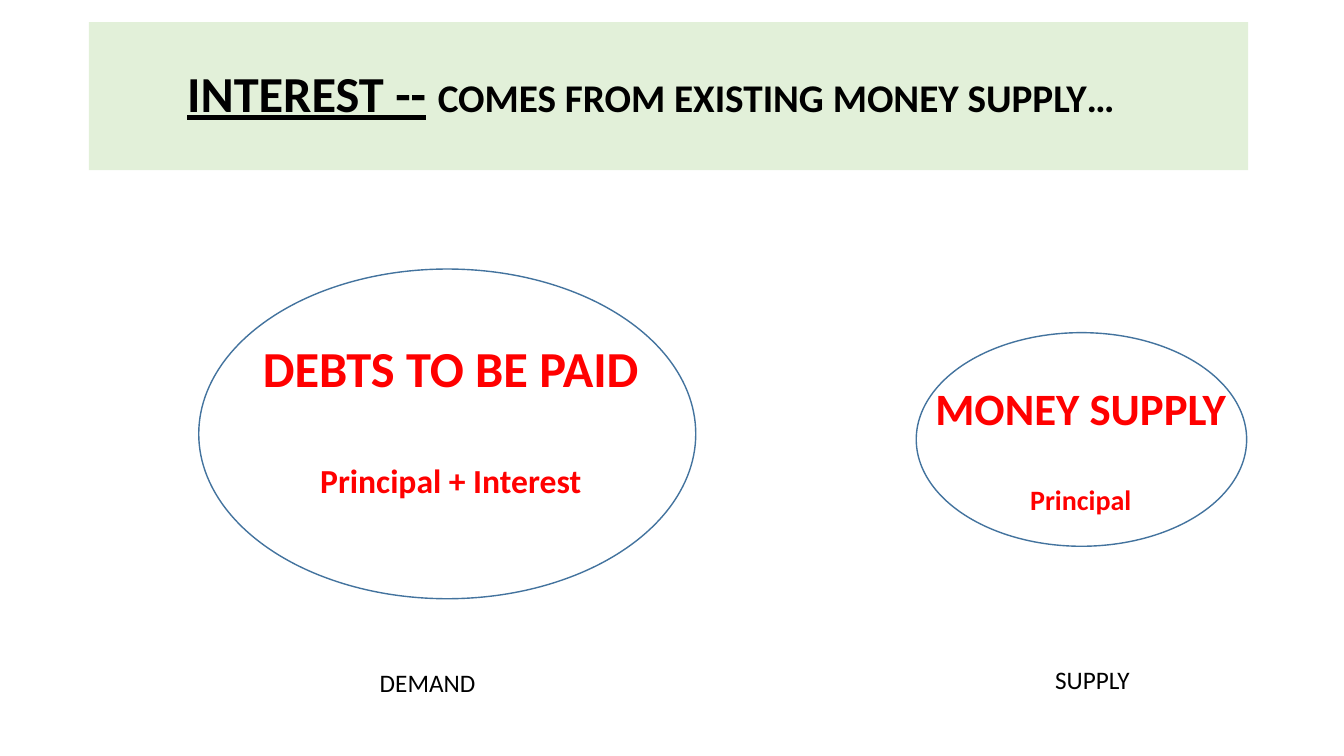
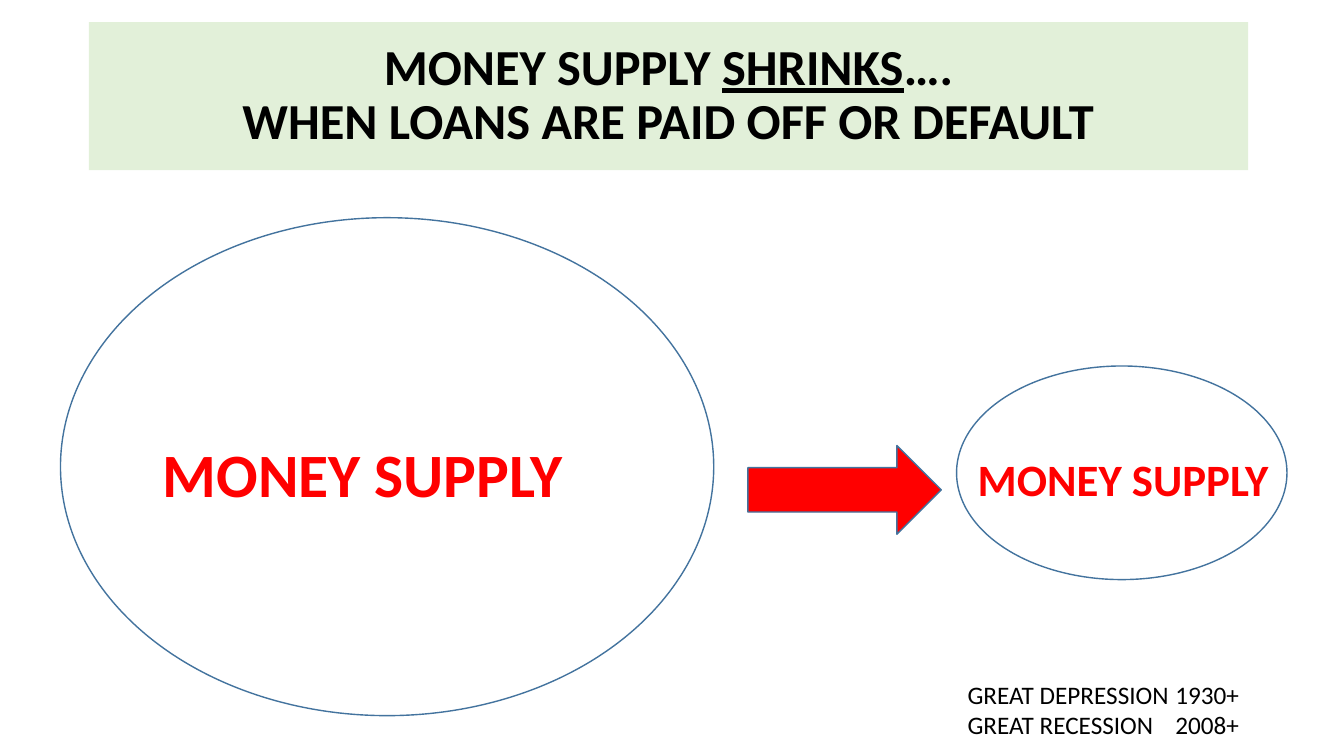
import dataclasses
import lxml.etree
import pptx
import pptx.dml.color
import pptx.enum.shapes
import pptx.enum.text
import pptx.oxml.ns
import pptx.util

Pt = pptx.util.Pt
MSO_SHAPE = pptx.enum.shapes.MSO_SHAPE
PP_ALIGN = pptx.enum.text.PP_ALIGN


@dataclasses.dataclass(frozen=True)
class Theme:
    font: str = "Calibri"
    ink: str = "000000"
    accent: str = "FF0000"
    band: str = "E2F0D9"
    outline: str = "43739E"
    hero: int = 44
    title: int = 36
    label: int = 32
    subtitle: int = 28
    detail: int = 24
    minor: int = 20
    note: int = 18


T = Theme()
BAND_BOX = (63.5, 15.8, 828, 105.8)


def rgb(value):
    return pptx.dml.color.RGBColor.from_string(value)


def add_run(p, text, size, color=T.ink, bold=False, underline=False):
    r = p.add_run()
    r.text = text
    r.font.name = T.font
    r.font.size = Pt(size)
    r.font.bold = bold
    r.font.underline = underline
    r.font.color.rgb = rgb(color)


def paragraph(tf, index):
    return tf.paragraphs[0] if index == 0 else tf.add_paragraph()


def add_text_box(s, box):
    tf = s.shapes.add_textbox(*map(Pt, box)).text_frame
    tf.word_wrap = True
    return tf


def add_outlined(s, kind, box, fill=None):
    sp = s.shapes.add_shape(kind, *map(Pt, box))
    sp.shadow.inherit = False
    if fill:
        sp.fill.solid()
        sp.fill.fore_color.rgb = rgb(fill)
    else:
        sp.fill.background()
    sp.line.color.rgb = rgb(T.outline)
    sp.line.width = Pt(1)


def title_band(s, box, lines, right_inset=7.2):
    sp = s.shapes.title
    sp.left, sp.top, sp.width, sp.height = map(Pt, box)
    sp.fill.solid()
    sp.fill.fore_color.rgb = rgb(T.band)
    tf = sp.text_frame
    tf.auto_size = pptx.enum.text.MSO_AUTO_SIZE.NONE
    tf.vertical_anchor = pptx.enum.text.MSO_ANCHOR.MIDDLE
    tf.margin_right = Pt(right_inset)
    for i, runs in enumerate(lines):
        p = paragraph(tf, i)
        p.alignment = PP_ALIGN.CENTER
        p.line_spacing = 0.9
        for text, size, underline in runs:
            add_run(p, text, size, bold=True, underline=underline)


def bubble(s, box, text_box, captions, gap=0):
    left, top, _, _ = box
    dx, dy, width, height = text_box
    add_outlined(s, MSO_SHAPE.OVAL, box)
    tf = add_text_box(s, (left + dx, top + dy, width, height))
    for i, (text, size) in enumerate(captions):
        p = paragraph(tf, i)
        p.alignment = PP_ALIGN.CENTER
        if i:
            p.space_before = Pt(gap)
        add_run(p, text, size, T.accent, bold=True)


def note(s, box, lines, tab=None):
    tf = add_text_box(s, box)
    for i, text in enumerate(lines):
        p = paragraph(tf, i)
        if tab:
            qn = pptx.oxml.ns.qn
            stops = lxml.etree.SubElement(p._p.get_or_add_pPr(), qn("a:tabLst"))
            lxml.etree.SubElement(stops, qn("a:tab"), pos=str(Pt(tab)), algn="l")
        add_run(p, text, T.note)


def interest_slide(prs):
    s = prs.slides.add_slide(prs.slide_layouts[5])
    title_band(s, BAND_BOX, [[
        ("INTEREST --", T.title, True),
        (" ", T.title, False),
        ("COMES FROM EXISTING MONEY SUPPLY…", T.subtitle, False),
    ]], right_inset=32.4)
    bubble(s, (142, 192.2, 355, 235.5), (33, 45.4, 294, 163),
           [("DEBTS TO BE PAID", T.title), ("Principal + Interest", T.detail)], gap=44)
    bubble(s, (654.5, 237.6, 236, 152.6), (2.5, 31, 230, 104),
           [("MONEY SUPPLY", T.label), ("Principal", T.minor)], gap=34)
    note(s, (264.2, 473, 100, 29), ["DEMAND"])
    note(s, (746.6, 470.9, 100, 29), ["SUPPLY"])


def shrinking_slide(prs):
    s = prs.slides.add_slide(prs.slide_layouts[5])
    title_band(s, BAND_BOX, [
        [("MONEY SUPPLY ", T.title, False), ("SHRINKS", T.title, True), ("….", T.title, False)],
        [("WHEN LOANS ARE PAID OFF OR DEFAULT", T.title, False)],
    ])
    bubble(s, (43.2, 155.5, 466.6, 355.7), (64, 152, 304, 60), [("MONEY SUPPLY", T.hero)])
    bubble(s, (683.3, 261.4, 236, 152.6), (4, 57.6, 230, 46), [("MONEY SUPPLY", T.label)])
    add_outlined(s, MSO_SHAPE.RIGHT_ARROW, (534.2, 318.2, 138.2, 63.4), T.accent)
    note(s, (684, 481.7, 214, 51),
         ["GREAT DEPRESSION\t1930+", "GREAT RECESSION\t2008+"], tab=148.5)


def main():
    prs = pptx.Presentation()
    prs.slide_width, prs.slide_height = Pt(960), Pt(540)
    interest_slide(prs)
    shrinking_slide(prs)
    prs.save("out.pptx")


if __name__ == "__main__":
    main()
